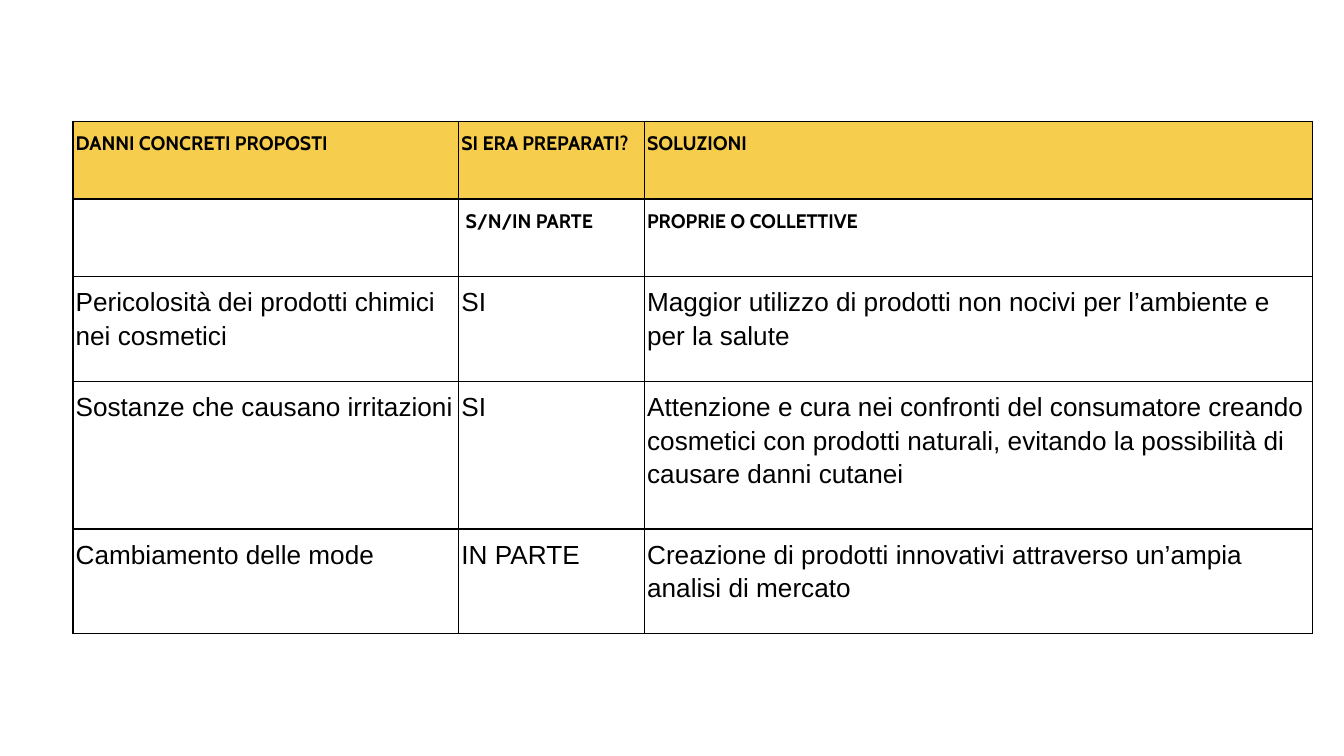
from lxml.etree import SubElement
from pptx import Presentation
from pptx.dml.color import RGBColor as Rgb
from pptx.oxml.ns import qn
from pptx.util import Cm, Pt

COLORS = {"text": "000000", "border": "000000", "header": "F6CD4C", "body": "FFFFFF"}
COLUMN_WIDTHS = [7.29, 3.51, 12.62]
ROW_HEIGHTS = [1.47, 1.47, 1.98, 2.79, 1.98]
HEADING_ROWS = 2
DAMAGES = [
    ["DANNI CONCRETI PROPOSTI", "SI ERA PREPARATI?", "SOLUZIONI"],
    ["", " S/N/IN PARTE", "PROPRIE O COLLETTIVE"],
    ["Pericolosità dei prodotti chimici nei cosmetici", "SI",
     "Maggior utilizzo di prodotti non nocivi per l’ambiente e per la salute"],
    ["Sostanze che causano irritazioni", "SI",
     "Attenzione e cura nei confronti del consumatore creando cosmetici "
     "con prodotti naturali, evitando la possibilità di causare danni cutanei"],
    ["Cambiamento delle mode", "IN PARTE",
     "Creazione di prodotti innovativi attraverso un’ampia analisi di mercato"],
]


def write_text(frame, text, font="Arial", size=14, bold=False, color="text"):
    """Write one formatted paragraph into a text frame."""
    paragraph = frame.paragraphs[0]
    paragraph.line_spacing = 1.15
    if not text:
        return
    run = paragraph.add_run()
    run.text = text
    run.font.name = font
    run.font.size = Pt(size)
    run.font.bold = bold
    run.font.color.rgb = Rgb.from_string(COLORS[color])


def draw_borders(cell, width=0.75, color="border"):
    """Draw a solid line on all four sides of a cell."""
    properties = cell._tc.get_or_add_tcPr()
    for side in ("a:lnL", "a:lnR", "a:lnT", "a:lnB"):
        line = SubElement(properties, qn(side), w=str(Pt(width)))
        fill = SubElement(line, qn("a:solidFill"))
        SubElement(fill, qn("a:srgbClr"), val=COLORS[color])


def style_cell(cell, fill):
    """Set the margins, borders and fill of a cell."""
    cell.margin_left = cell.margin_right = Cm(0.05)
    cell.margin_top = cell.margin_bottom = Cm(0.13)
    draw_borders(cell)
    cell.fill.solid()
    cell.fill.fore_color.rgb = Rgb.from_string(COLORS[fill])


def add_damage_table(slide, left, top):
    """Add the table of damages, preparedness and solutions."""
    table = slide.shapes.add_table(
        len(ROW_HEIGHTS), len(COLUMN_WIDTHS), Cm(left), Cm(top),
        Cm(sum(COLUMN_WIDTHS)), Cm(sum(ROW_HEIGHTS))).table
    table.horz_banding = False
    table.first_row = False
    for column, width in zip(table.columns, COLUMN_WIDTHS):
        column.width = Cm(width)
    for index, (row, height, texts) in enumerate(zip(table.rows, ROW_HEIGHTS, DAMAGES)):
        row.height = Cm(height)
        heading = {"font": "Cabin", "size": 10.5, "bold": True} if index < HEADING_ROWS else {}
        for cell, text in zip(row.cells, texts):
            style_cell(cell, "header" if index == 0 else "body")
            write_text(cell.text_frame, text, **heading)


def main():
    """Build the slide and save it."""
    deck = Presentation()
    deck.slide_width, deck.slide_height = Cm(25.4), Cm(14.29)
    slide = deck.slides.add_slide(deck.slide_layouts[6])
    add_damage_table(slide, left=1.38, top=2.29)
    deck.save("out.pptx")


if __name__ == "__main__":
    main()
